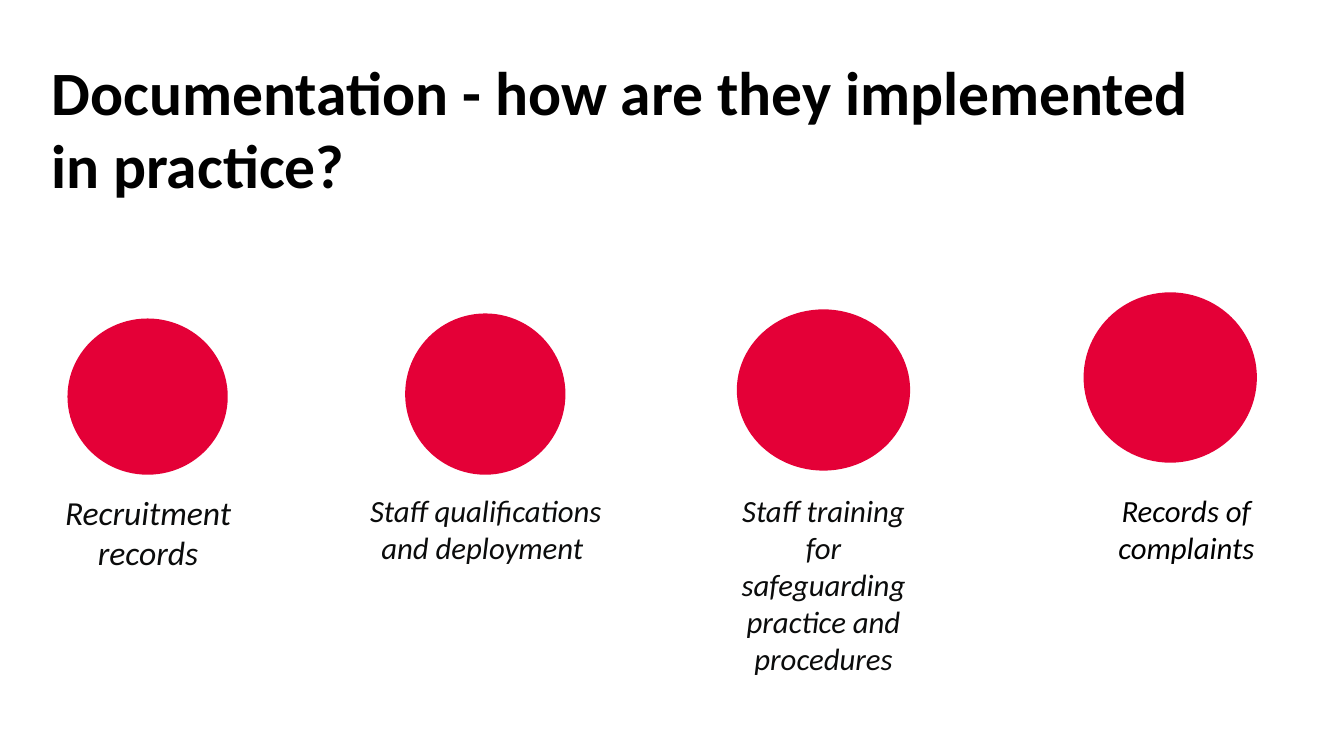
from dataclasses import dataclass

import pptx
import pptx.dml.color
import pptx.enum.shapes
import pptx.enum.text
import pptx.presentation
import pptx.shapes.base
import pptx.slide
import pptx.text.text
import pptx.util
from pptx.util import Pt


@dataclass(frozen=True)
class Theme:
    font: str = "Calibri"
    red: str = "E40037"
    black: str = "000000"
    ink: str = "0B0C0C"
    title_size: float = 44
    large_caption_size: float = 24
    caption_size: float = 22
    caption_space_after: float = 11.3


@dataclass(frozen=True)
class Box:
    left: float
    top: float
    width: float
    height: float

    def lengths(self) -> tuple[pptx.util.Length, ...]:
        return tuple(Pt(value) for value in (self.left, self.top, self.width, self.height))


@dataclass(frozen=True)
class Record:
    caption: str
    circle: Box
    caption_box: Box
    size: float
    color: str
    space_after: float


THEME = Theme()
CAPTION_TOP = 351.4
TITLE = "Documentation - how are they implemented in practice?"
TITLE_BOX = Box(36.7, 38.2, 849.6, 83.5)

RECORDS = [
    Record("Recruitment records", Box(48.2, 227.5, 114.5, 111.6),
           Box(43.9, CAPTION_TOP, 123.8, 74.2), THEME.large_caption_size, THEME.ink, 0),
    Record("Staff qualifications and deployment ", Box(289.4, 223.9, 114.5, 115.2),
           Box(260.6, CAPTION_TOP, 172.8, 53.3), THEME.caption_size, THEME.ink,
           THEME.caption_space_after),
    Record("Staff training for safeguarding practice and procedures",
           Box(526.3, 221, 123.8, 115.2), Box(526.3, CAPTION_TOP, 123.8, 64.8),
           THEME.caption_size, THEME.ink, THEME.caption_space_after),
    Record("Records of complaints", Box(774, 208.8, 123.8, 121.7),
           Box(785.5, CAPTION_TOP, 123.8, 74.2), THEME.caption_size, THEME.black,
           THEME.caption_space_after),
]


def write_text(frame: pptx.text.text.TextFrame, text: str, size: float, color: str,
               alignment: pptx.enum.text.PP_ALIGN, bold: bool = False,
               italic: bool = False, space_after: float = 0) -> None:
    frame.word_wrap = True
    frame.auto_size = pptx.enum.text.MSO_AUTO_SIZE.NONE
    frame.vertical_anchor = pptx.enum.text.MSO_ANCHOR.TOP
    frame.margin_left = frame.margin_right = frame.margin_top = frame.margin_bottom = Pt(0)
    paragraph = frame.paragraphs[0]
    paragraph.alignment = alignment
    paragraph.space_after = Pt(space_after)
    run = paragraph.add_run()
    run.text = text
    run.font.name = THEME.font
    run.font.size = Pt(size)
    run.font.bold = bold
    run.font.italic = italic
    run.font.color.rgb = pptx.dml.color.RGBColor.from_string(color)


def add_title(slide: pptx.slide.Slide) -> None:
    title = slide.shapes.title
    title.left, title.top, title.width, title.height = TITLE_BOX.lengths()
    write_text(title.text_frame, TITLE, THEME.title_size, THEME.black,
               pptx.enum.text.PP_ALIGN.LEFT, bold=True)


def add_record(slide: pptx.slide.Slide, record: Record) -> None:
    # Red circle
    circle = slide.shapes.add_shape(pptx.enum.shapes.MSO_SHAPE.OVAL, *record.circle.lengths())
    circle.shadow.inherit = False
    circle.fill.solid()
    circle.fill.fore_color.rgb = pptx.dml.color.RGBColor.from_string(THEME.red)
    circle.line.fill.background()

    # Caption below it
    caption = slide.shapes.add_textbox(*record.caption_box.lengths())
    write_text(caption.text_frame, record.caption, record.size, record.color,
               pptx.enum.text.PP_ALIGN.CENTER, italic=True, space_after=record.space_after)


def main() -> None:
    presentation = pptx.Presentation()
    presentation.slide_width, presentation.slide_height = Pt(960), Pt(540)
    title_only = presentation.slide_layouts.get_by_name("Title Only")
    slide = presentation.slides.add_slide(title_only)
    add_title(slide)
    for record in RECORDS:
        add_record(slide, record)
    presentation.save("out.pptx")


if __name__ == "__main__":
    main()
